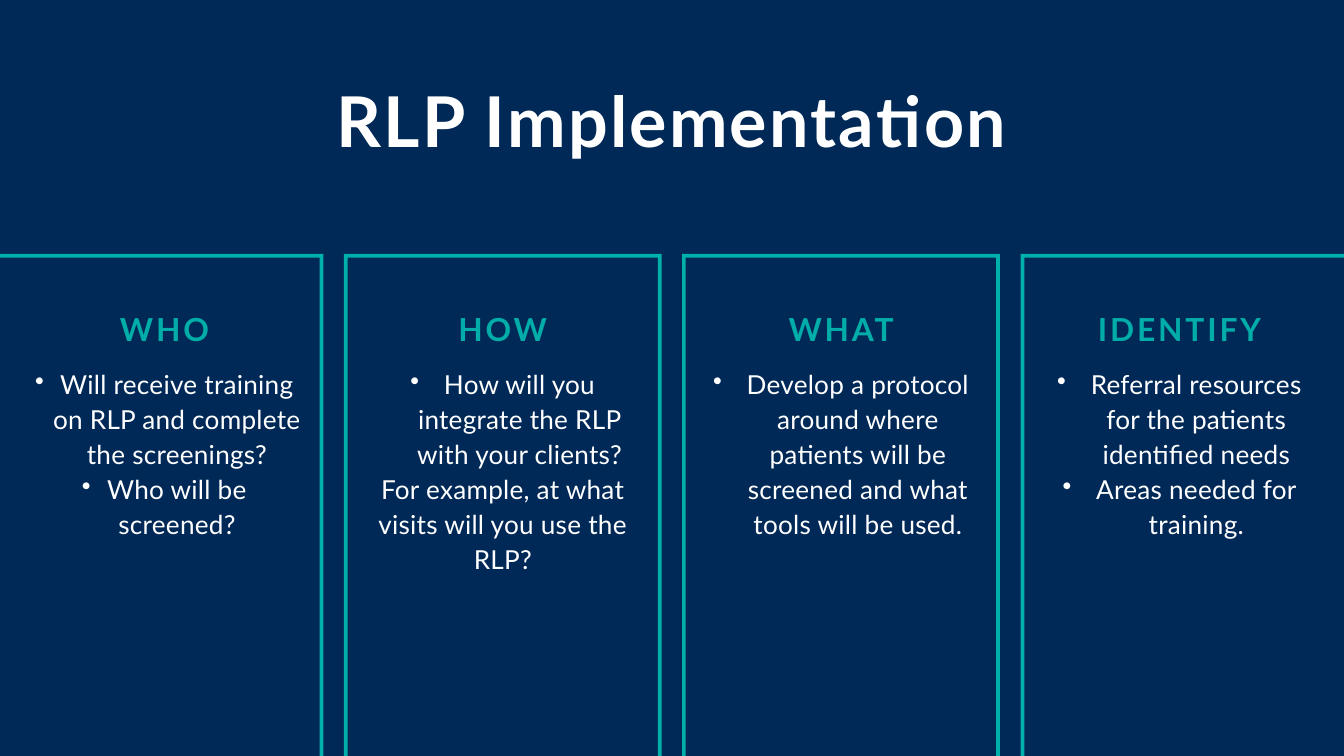
import pptx
import pptx.dml.color
import pptx.enum.text
import pptx.util
import lxml.etree
from pptx.oxml.ns import qn

Cm = pptx.util.Cm
Pt = pptx.util.Pt


def color(hex_string):
    return pptx.dml.color.RGBColor.from_string(hex_string)


def add_text(left, top, width, height, paragraphs, style):
    """Add a centred text box; paragraphs are (text, bullet indent in cm or 0)."""
    box = slide.shapes.add_textbox(Cm(left), Cm(top), Cm(width), Cm(height))
    for name, value in BOX_FORMAT.items():
        setattr(box.text_frame, name, value)
    for number, (text, indent) in enumerate(paragraphs):
        frame = box.text_frame
        paragraph = frame.add_paragraph() if number else frame.paragraphs[0]
        paragraph.alignment = pptx.enum.text.PP_ALIGN.CENTER
        paragraph.line_spacing = Pt(style["leading"])
        if indent:
            properties = paragraph._p.get_or_add_pPr()
            properties.set("marL", str(Cm(indent)))
            properties.set("indent", str(-Cm(indent)))
            lxml.etree.SubElement(properties, qn("a:buChar")).set("char", "•")
        run = paragraph.add_run()
        run.text = text
        for name, value in style["font"].items():
            setattr(run.font, name, value)
        run.font.color.rgb = color(style["color"])
        run._r.get_or_add_rPr().set("spc", str(style["spacing"]))


BOX_FORMAT = {
    "margin_left": 0, "margin_top": 0, "margin_right": 0, "margin_bottom": 0,
    "word_wrap": True,
    "auto_size": pptx.enum.text.MSO_AUTO_SIZE.SHAPE_TO_FIT_TEXT,
}
# Letter spacing is in hundredths of a point
TITLE = {"font": {"name": "Lato", "size": Pt(75), "bold": True},
         "color": "FFFFFF", "leading": 75, "spacing": 240}
HEADING = {"font": {"name": "Lato", "size": Pt(34), "bold": True},
           "color": "00ADA8", "leading": 47.6, "spacing": 310}
BODY = {"font": {"name": "Lato", "size": Pt(28), "bold": False},
        "color": "FFFFFF", "leading": 37.5, "spacing": 30}

# Frame left, width and height, heading, body height, body paragraphs
COLUMNS = [
    (-0.51, 12.73, 20.14, "WHO", 7.98, [
        ("Will receive training on RLP and complete the screenings?", 0.95),
        ("Who will be screened?", 0.95)]),
    (13, 12.01, 20.14, "HOW", 8, [
        ("How will you integrate the RLP with your clients?", 1.27),
        ("For example, at what visits will you use the RLP?", 0)]),
    (25.78, 12.01, 20.55, "WHAT", 6.65, [
        ("Develop a protocol around where patients will be screened "
         "and what tools will be used.", 1.27)]),
    (38.58, 12.65, 20.07, "IDENTIFY", 8, [
        ("Referral resources for the patients identified needs", 1.27),
        ("Areas needed for training.", 1.27)]),
]
FRAME_TOP = 9.6
BORDER = 0.14
TEXT_LEFT, TEXT_WIDTH, TEXT_PITCH = 0.92, 10.59, 12.79

presentation = pptx.Presentation()
presentation.slide_width = Cm(50.8)
presentation.slide_height = Cm(28.575)
slide = presentation.slides.add_slide(presentation.slide_layouts[6])
slide.background.fill.solid()
slide.background.fill.fore_color.rgb = color("002957")

add_text(4.37, 3.45, 42.06, 2.67, [("RLP Implementation", 0)], TITLE)

for index, (left, width, height, heading, body_height, body) in enumerate(COLUMNS):
    outline = slide.shapes.build_freeform(Cm(left), Cm(FRAME_TOP))
    for inset in (0, BORDER):
        x1, x2 = Cm(left + inset), Cm(left + width - inset)
        y1, y2 = Cm(FRAME_TOP + inset), Cm(FRAME_TOP + height - inset)
        if inset:
            outline.move_to(x1, y1)
        outline.add_line_segments([(x1, y2), (x2, y2), (x2, y1)], close=True)
    frame = outline.convert_to_shape()
    frame.shadow.inherit = False
    frame.fill.solid()
    frame.fill.fore_color.rgb = color("00B0AB")
    frame.line.fill.background()

    text_left = TEXT_LEFT + index * TEXT_PITCH
    add_text(text_left, 11.48, TEXT_WIDTH, 1.55, [(heading, 0)], HEADING)
    add_text(text_left, 13.79, TEXT_WIDTH, body_height, body, BODY)

presentation.save("out.pptx")
